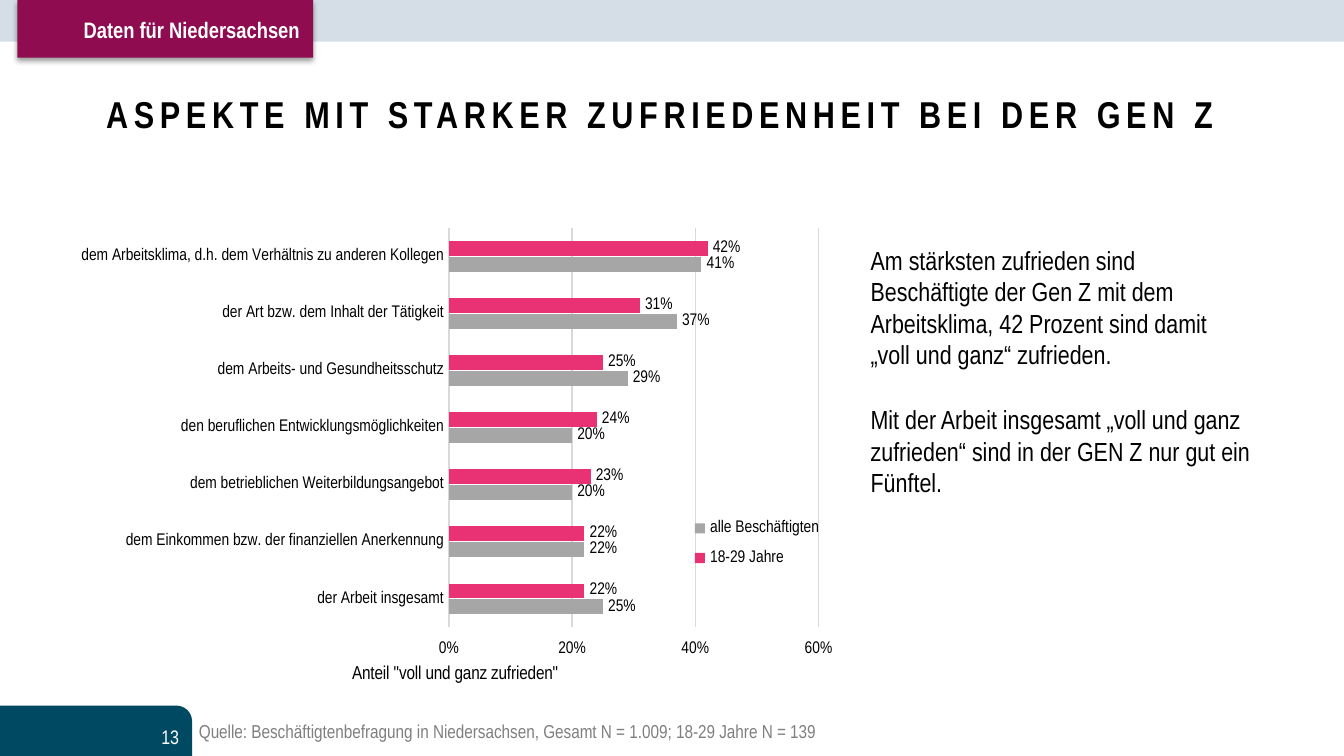
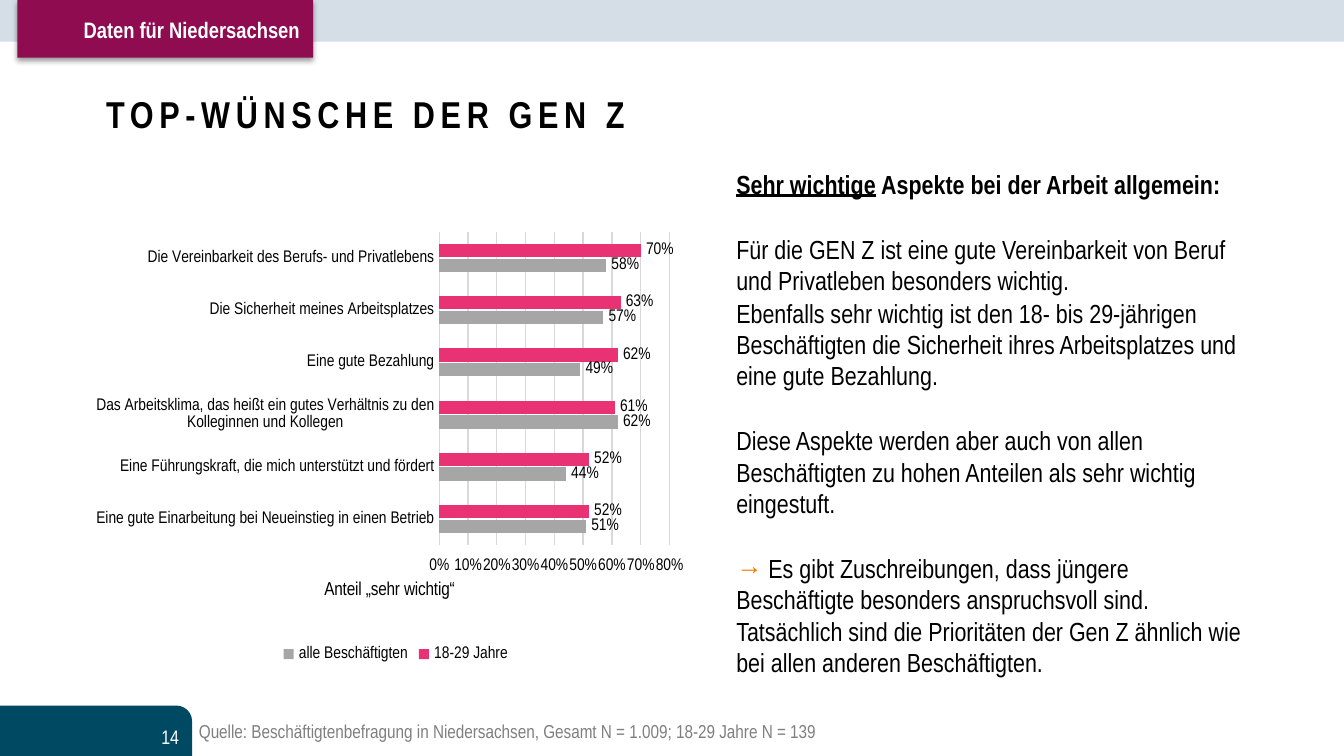
from dataclasses import dataclass
from typing import Optional

from lxml.etree import SubElement
from pptx import Presentation
from pptx.chart.data import CategoryChartData
from pptx.dml.color import RGBColor
from pptx.enum.chart import XL_AXIS_CROSSES as Crosses
from pptx.enum.chart import XL_CHART_TYPE as ChartType
from pptx.enum.chart import XL_LABEL_POSITION as LabelPosition
from pptx.enum.chart import XL_LEGEND_POSITION as LegendPosition
from pptx.enum.chart import XL_TICK_LABEL_POSITION as TickLabels
from pptx.enum.chart import XL_TICK_MARK as TickMark
from pptx.enum.shapes import MSO_SHAPE as Preset
from pptx.enum.text import MSO_ANCHOR as Anchor
from pptx.enum.text import MSO_AUTO_SIZE as AutoSize
from pptx.enum.text import PP_ALIGN as Align
from pptx.oxml.ns import qn
from pptx.util import Emu, Pt

PX = 9144
SLIDE_WIDTH = 1000 * PX
SLIDE_HEIGHT = SLIDE_WIDTH * 9 // 16


@dataclass(frozen=True)
class Theme:
    font: str = "Arial Narrow"
    text: str = "000000"
    light: str = "FFFFFF"
    muted: str = "7F7F7F"
    accent: str = "EF7D00"
    band: str = "D5DEE6"
    corner: str = "004963"
    tag: str = "8E0C4F"
    young: str = "E83274"
    everyone: str = "A6A6A6"
    grid: str = "D9D9D9"
    title_size: float = 20
    body_size: float = 14
    tag_size: float = 12
    number_size: float = 10.5
    source_size: float = 10
    axis_title_size: float = 10
    chart_size: float = 9
    title_spacing: int = 300
    line_gap: float = 0.7
    block_gap: float = 18


THEME = Theme()


@dataclass(frozen=True)
class Box:
    left: int
    top: int
    width: int
    height: int

    def emu(self) -> tuple[Emu, ...]:
        return tuple(Emu(n * PX) for n in (self.left, self.top, self.width, self.height))


@dataclass(frozen=True)
class Span:
    text: str
    color: str = THEME.text
    bold: bool = False
    underline: bool = False


@dataclass(frozen=True)
class Passage:
    spans: tuple[Span, ...]
    gap: float = THEME.block_gap


@dataclass(frozen=True)
class Survey:
    box: Box
    axis_title: str
    axis_title_at: tuple[float, ...]
    plot_at: tuple[float, ...]
    maximum: float
    step: float
    legend: LegendPosition
    legend_at: Optional[tuple[float, ...]]
    answers: tuple[tuple[str, float, float], ...]


@dataclass(frozen=True)
class Page:
    number: int
    title: str
    title_box: Box
    body_box: Box
    body: tuple[Passage, ...]
    survey: Survey


TAG_TEXT = "Daten für Niedersachsen"
SOURCE_TEXT = "Quelle: Beschäftigtenbefragung in Niedersachsen, Gesamt N = 1.009; 18-29 Jahre N = 139"

PAGES = (
    Page(
        13,
        "ASPEKTE MIT STARKER ZUFRIEDENHEIT BEI DER GEN Z",
        Box(69, 30, 954, 109),
        Box(638, 177, 303, 283),
        (
            Passage((Span("Am stärksten zufrieden sind Beschäftigte der Gen Z mit dem Arbeitsklima, "
                          "42 Prozent sind damit „voll und ganz“ zufrieden."),)),
            Passage((Span("Mit der Arbeit insgesamt „voll und ganz zufrieden“ sind in der GEN Z "
                          "nur gut ein Fünftel."),)),
        ),
        Survey(
            Box(59, 159, 573, 358),
            'Anteil "voll und ganz zufrieden"',
            (0.35, 0.93),
            (0.48, 0.03, 0.48, 0.83),
            0.6,
            0.2,
            LegendPosition.RIGHT,
            (0.79, 0.61, 0.18, 0.15),
            (
                ("dem Arbeitsklima, d.h. dem Verhältnis zu anderen Kollegen", 0.42, 0.41),
                ("der Art bzw. dem Inhalt der Tätigkeit", 0.31, 0.37),
                ("dem Arbeits- und Gesundheitsschutz", 0.25, 0.29),
                ("den beruflichen Entwicklungsmöglichkeiten", 0.24, 0.2),
                ("dem betrieblichen Weiterbildungsangebot", 0.23, 0.2),
                ("dem Einkommen bzw. der finanziellen Anerkennung", 0.22, 0.22),
                ("der Arbeit insgesamt", 0.22, 0.25),
            ),
        ),
    ),
    Page(
        14,
        "TOP-WÜNSCHE DER GEN Z",
        Box(69, 30, 862, 109),
        Box(538, 120, 399, 399),
        (
            Passage((Span("Sehr wichtige", bold=True, underline=True),
                     Span(" Aspekte bei der Arbeit allgemein:", bold=True))),
            Passage((Span("Für die GEN Z ist eine gute Vereinbarkeit von Beruf und Privatleben "
                          "besonders wichtig."),)),
            Passage((Span("Ebenfalls sehr wichtig ist den 18- bis 29-jährigen Beschäftigten die "
                          "Sicherheit ihres Arbeitsplatzes und eine gute Bezahlung."),), THEME.line_gap),
            Passage((Span("Diese Aspekte werden aber auch von allen Beschäftigten zu hohen Anteilen "
                          "als sehr wichtig eingestuft."),)),
            Passage((Span("→ ", THEME.accent),
                     Span("Es gibt Zuschreibungen, dass jüngere Beschäftigte besonders anspruchsvoll "
                          "sind. Tatsächlich sind die Prioritäten der Gen Z ähnlich wie bei allen "
                          "anderen Beschäftigten."))),
        ),
        Survey(
            Box(63, 159, 463, 338),
            "Anteil „sehr wichtig“",
            (0.38, 0.8),
            (0.57, 0.04, 0.37, 0.69),
            0.8,
            0.1,
            LegendPosition.BOTTOM,
            None,
            (
                ("Die Vereinbarkeit des Berufs- und Privatlebens", 0.7, 0.58),
                ("Die Sicherheit meines Arbeitsplatzes", 0.63, 0.57),
                ("Eine gute Bezahlung", 0.62, 0.49),
                ("Das Arbeitsklima, das heißt ein gutes Verhältnis zu den Kolleginnen und Kollegen",
                 0.61, 0.62),
                ("Eine Führungskraft, die mich unterstützt und fördert", 0.52, 0.44),
                ("Eine gute Einarbeitung bei Neueinstieg in einen Betrieb", 0.52, 0.51),
            ),
        ),
    ),
)


def style(font, size: float, color: str = THEME.text, bold: bool = False) -> None:
    font.name = THEME.font
    font.size = Pt(size)
    font.bold = bold
    font.color.rgb = RGBColor.from_string(color)


def add_block(shapes, preset: Preset, box: Box, color: str):
    block = shapes.add_shape(preset, *box.emu())
    block.shadow.inherit = False
    block.fill.solid()
    block.fill.fore_color.rgb = RGBColor.from_string(color)
    block.line.fill.background()
    return block


def add_label(shapes, box: Box, text: str, size: float, color: str, bold: bool = False,
              align: Align = Align.LEFT, anchor: Anchor = Anchor.TOP):
    frame = shapes.add_textbox(*box.emu()).text_frame
    frame.word_wrap = True
    frame.vertical_anchor = anchor
    frame.text = text
    frame.paragraphs[0].alignment = align
    style(frame.paragraphs[0].runs[0].font, size, color, bold)
    return frame


def add_tag(slide) -> None:
    group = slide.shapes.add_group_shape()
    plate = add_block(group.shapes, Preset.RECTANGLE, Box(13, 0, 220, 43), THEME.tag)
    effects = plate._element.spPr.find(qn("a:effectLst"))
    shadow = SubElement(effects, qn("a:outerShdw"), blurRad=str(Pt(3.1)), dist=str(Pt(1.6)),
                        dir="5400000", algn="t", rotWithShape="0")
    tint = SubElement(shadow, qn("a:srgbClr"), val=THEME.text)
    SubElement(tint, qn("a:alpha"), val="38000")
    add_label(group.shapes, Box(34, 7, 199, 30), TAG_TEXT, THEME.tag_size, THEME.light,
              bold=True, align=Align.RIGHT)


def add_frame(slide, number: int) -> None:
    corner = add_block(slide.shapes, Preset.ROUND_1_RECTANGLE, Box(0, 525, 143, 37), THEME.corner)
    corner.height = Emu(SLIDE_HEIGHT - corner.top)
    corner.adjustments[0] = 0.31
    add_block(slide.shapes, Preset.RECTANGLE, Box(0, 0, 1000, 31), THEME.band)
    add_label(slide.shapes, Box(34, 533, 109, 30), str(number), THEME.number_size, THEME.light,
              align=Align.RIGHT, anchor=Anchor.MIDDLE)
    add_tag(slide)
    source = add_label(slide.shapes, Box(143, 531, 735, 26), SOURCE_TEXT,
                       THEME.source_size, THEME.muted)
    inset = Emu(5 * PX)
    source.margin_left = source.margin_top = source.margin_right = source.margin_bottom = inset


def set_title(slide, text: str, box: Box) -> None:
    title = slide.shapes.title
    title.left, title.top, title.width, title.height = box.emu()
    frame = title.text_frame
    frame.text = text
    frame.word_wrap = True
    frame.auto_size = AutoSize.NONE
    frame.vertical_anchor = Anchor.MIDDLE
    heading = frame.paragraphs[0]
    heading.alignment = Align.LEFT
    style(heading.runs[0].font, THEME.title_size, bold=True)
    heading.runs[0].font._element.set("spc", str(THEME.title_spacing))


def add_body(slide, box: Box, passages: tuple[Passage, ...]) -> None:
    frame = slide.shapes.add_textbox(*box.emu()).text_frame
    frame.word_wrap = True
    for index, passage in enumerate(passages):
        paragraph = frame.add_paragraph() if index else frame.paragraphs[0]
        if index:
            paragraph.space_before = Pt(passage.gap)
        for span in passage.spans:
            run = paragraph.add_run()
            run.text = span.text
            style(run.font, THEME.body_size, span.color, span.bold)
            run.font.underline = span.underline


def place(element, position: int, fractions: tuple[float, ...], inner: bool = False) -> None:
    for previous in element.findall(qn("c:layout")):
        element.remove(previous)
    layout = element.makeelement(qn("c:layout"))
    element.insert(position, layout)
    manual = SubElement(layout, qn("c:manualLayout"))
    if inner:
        SubElement(manual, qn("c:layoutTarget"), val="inner")
    for mode in ("xMode", "yMode"):
        SubElement(manual, qn(f"c:{mode}"), val="edge")
    for side, fraction in zip("xywh", fractions):
        SubElement(manual, qn(f"c:{side}"), val=str(fraction))


def add_survey(slide, survey: Survey) -> None:
    aspects, young, everyone = zip(*survey.answers)
    shares = CategoryChartData(number_format="0%")
    shares.categories = aspects
    shares.add_series("18-29 Jahre", young)
    shares.add_series("alle Beschäftigten", everyone)
    chart = slide.shapes.add_chart(ChartType.BAR_CLUSTERED, *survey.box.emu(), shares).chart
    chart.has_title = False
    style(chart.font, THEME.chart_size)
    place(chart._chartSpace.chart.plotArea, 0, survey.plot_at, inner=True)

    bars = chart.plots[0]
    bars.gap_width = 182
    bars.overlap = -10
    bars.vary_by_categories = False
    for series, color in zip(bars.series, (THEME.young, THEME.everyone)):
        series.format.fill.solid()
        series.format.fill.fore_color.rgb = RGBColor.from_string(color)
        labels = series.data_labels
        labels.show_value = True
        labels.position = LabelPosition.OUTSIDE_END
        labels.number_format = "0%"
        labels.number_format_is_linked = False
        style(labels.font, THEME.chart_size)

    aspect_axis, share_axis = chart.category_axis, chart.value_axis
    for axis in (aspect_axis, share_axis):
        axis.major_tick_mark = axis.minor_tick_mark = TickMark.NONE
        style(axis.tick_labels.font, THEME.chart_size)
    aspect_axis.reverse_order = True
    aspect_axis.crosses = Crosses.MAXIMUM
    share_axis.tick_label_position = TickLabels.HIGH
    share_axis.minimum_scale = 0
    share_axis.maximum_scale = survey.maximum
    share_axis.major_unit = survey.step
    share_axis.has_major_gridlines = True
    share_axis.tick_labels.number_format = "0%"
    share_axis.tick_labels.number_format_is_linked = False
    share_axis.format.line.fill.background()
    for line in (aspect_axis.format.line, share_axis.major_gridlines.format.line):
        line.color.rgb = RGBColor.from_string(THEME.grid)
        line.width = Pt(0.75)

    caption = share_axis.axis_title
    caption.text_frame.text = survey.axis_title
    style(caption.text_frame.paragraphs[0].runs[0].font, THEME.axis_title_size)
    place(caption._element, 1, survey.axis_title_at)

    chart.has_legend = True
    chart.legend.position = survey.legend
    chart.legend.include_in_layout = False
    style(chart.legend.font, THEME.chart_size)
    if survey.legend_at:
        place(chart.legend._element, 1, survey.legend_at)


def main() -> None:
    deck = Presentation()
    deck.slide_width, deck.slide_height = Emu(SLIDE_WIDTH), Emu(SLIDE_HEIGHT)
    for page in PAGES:
        slide = deck.slides.add_slide(deck.slide_layouts[5])
        add_frame(slide, page.number)
        set_title(slide, page.title, page.title_box)
        add_body(slide, page.body_box, page.body)
        add_survey(slide, page.survey)
    deck.save("out.pptx")


if __name__ == "__main__":
    main()
